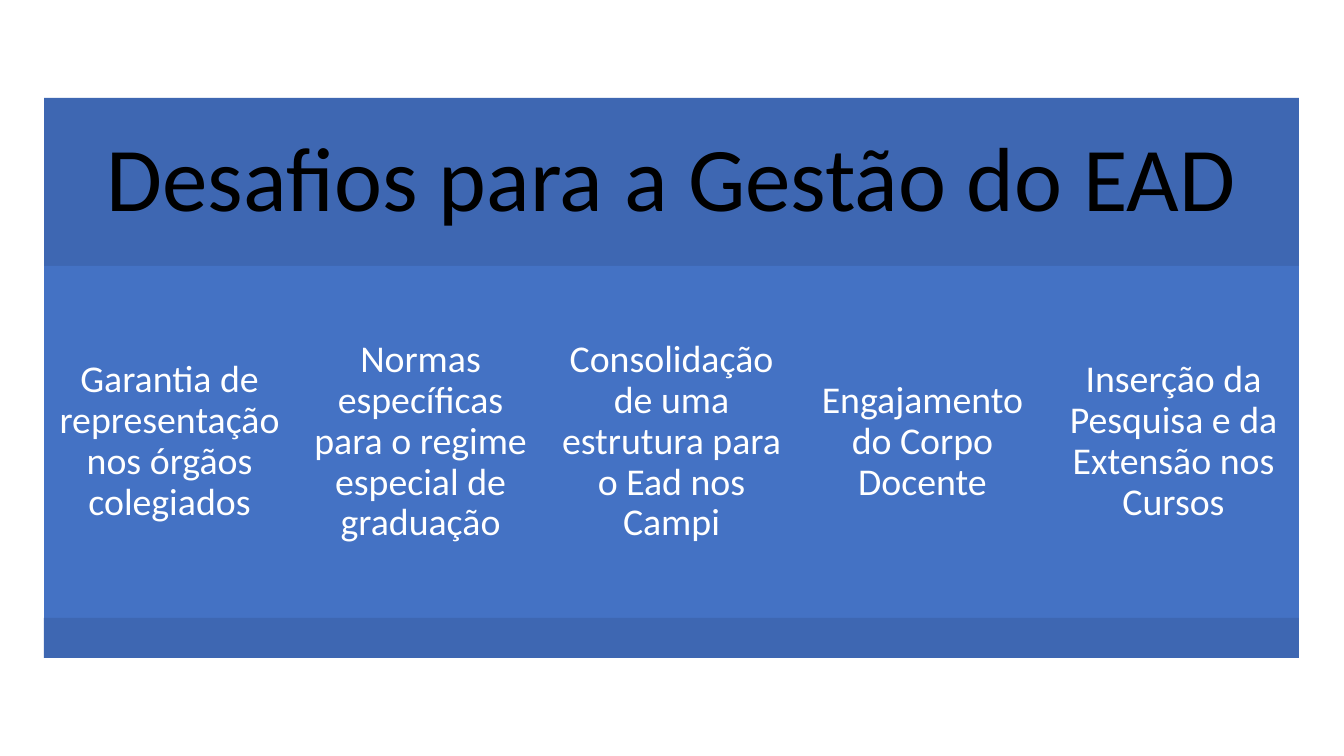
from pptx import Presentation
from pptx.dml.color import RGBColor
from pptx.enum.shapes import MSO_SHAPE
from pptx.enum.text import MSO_ANCHOR, MSO_AUTO_SIZE, PP_ALIGN
from pptx.util import Emu, Pt

PX = 914400 / 100.8
COLORS = {"band": "3E67B2", "column": "4472C4", "heading": "000000", "label": "FFFFFF"}
LEFT, COLUMN_WIDTH = 44, 251
HEADING_TOP, COLUMN_TOP, FOOTER_TOP, FOOTER_BOTTOM = 98, 266, 618, 658

CHALLENGES = [
    "Garantia de representação nos órgãos colegiados",
    "Normas específicas para o regime especial de graduação",
    "Consolidação de uma estrutura para o Ead nos Campi",
    "Engajamento do Corpo Docente",
    "Inserção da Pesquisa e da Extensão nos Cursos",
]
TOTAL_WIDTH = COLUMN_WIDTH * len(CHALLENGES)


def place(panel, left, top, width, bottom, color):
    """Position a panel and give it a flat fill."""
    panel.left, panel.top, panel.width, panel.height = (
        Emu(round(v * PX)) for v in (left, top, width, bottom - top))
    panel.fill.solid()
    panel.fill.fore_color.rgb = RGBColor.from_string(COLORS[color])
    panel.line.fill.background()
    panel.shadow.inherit = False


def write(panel, text, *, size, color, inset):
    """Write centred text in a panel."""
    frame = panel.text_frame
    frame.word_wrap = True
    frame.auto_size = MSO_AUTO_SIZE.NONE
    frame.vertical_anchor = MSO_ANCHOR.MIDDLE
    frame.margin_left = frame.margin_right = Emu(round(inset * PX))
    frame.margin_top = frame.margin_bottom = Emu(round(inset * PX))
    paragraph = frame.paragraphs[0]
    paragraph.alignment = PP_ALIGN.CENTER
    paragraph.line_spacing = 0.9
    run = paragraph.add_run()
    run.text = text
    run.font.name = "Calibri"
    run.font.size = Pt(size)
    run.font.color.rgb = RGBColor.from_string(COLORS[color])


presentation = Presentation()
presentation.slide_width = Emu(round(1344 * PX))
presentation.slide_height = Emu(round(756 * PX))
slide = presentation.slides.add_slide(presentation.slide_layouts[5])

# Heading band
heading = slide.shapes.title
place(heading, LEFT, HEADING_TOP, TOTAL_WIDTH, COLUMN_TOP, "band")
write(heading, "Desafios para a Gestão do EAD", size=65, color="heading", inset=27)

# One column per challenge
for index, challenge in enumerate(CHALLENGES):
    column = slide.shapes.add_shape(MSO_SHAPE.RECTANGLE, 0, 0, 0, 0)
    place(column, LEFT + index * COLUMN_WIDTH, COLUMN_TOP, COLUMN_WIDTH, FOOTER_TOP, "column")
    write(column, challenge, size=27, color="label", inset=11)

# Footer band
footer = slide.shapes.add_shape(MSO_SHAPE.RECTANGLE, 0, 0, 0, 0)
place(footer, LEFT, FOOTER_TOP, TOTAL_WIDTH, FOOTER_BOTTOM, "band")

presentation.save("out.pptx")
